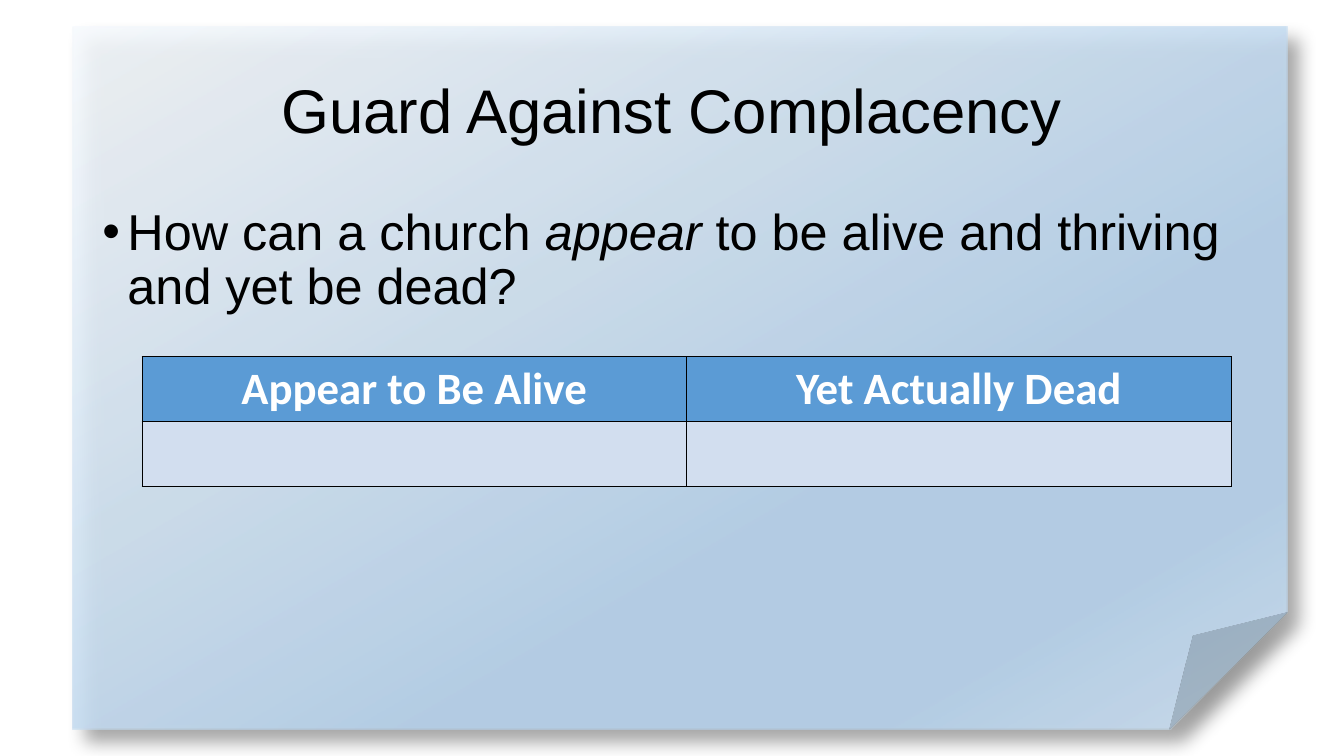
from lxml import etree
from pptx import Presentation
from pptx.dml.color import RGBColor
from pptx.enum.shapes import MSO_SHAPE
from pptx.enum.text import MSO_ANCHOR, PP_ALIGN
from pptx.oxml import parse_xml
from pptx.oxml.ns import qn
from pptx.util import Pt

FOLDED = MSO_SHAPE.FOLDED_CORNER
TOP, MIDDLE = MSO_ANCHOR.TOP, MSO_ANCHOR.MIDDLE
LEFT, CENTER = PP_ALIGN.LEFT, PP_ALIGN.CENTER
BLACK = RGBColor(0x00, 0x00, 0x00)
WHITE = RGBColor(0xFF, 0xFF, 0xFF)
PALE = RGBColor(0xF7, 0xFA, 0xFD)
SKY = RGBColor(0xB5, 0xD2, 0xEC)
MIST = RGBColor(0xCE, 0xE1, 0xF2)
BLUE = RGBColor(0x5B, 0x9B, 0xD5)
ICE = RGBColor(0xD2, 0xDE, 0xEF)
STOPS = [(0, PALE), (64, SKY), (83, SKY), (100, MIST)]
HEADS = ["Appear to Be Alive", "Yet Actually Dead"]
SPACE = 'xmlns:a="http://schemas.openxmlformats.org/drawingml/2006/main"'


def style(para, face, size, color, bold=None):
    """Set the font of a whole paragraph."""
    font = para.font
    font.name, font.size, font.bold = face, Pt(size), bold
    font.color.rgb = color


def add_page(slide):
    """Draw the sheet with its folded corner, gradient and shadow."""
    page = slide.shapes.add_shape(FOLDED, Pt(51.8), Pt(19.4), Pt(867.6), Pt(501.8))
    page.line.fill.background()
    page.shadow.inherit = False
    stops = "".join(
        f'<a:gs pos="{spot * 1000}"><a:srgbClr val="{color}">'
        f'<a:alpha val="87000"/></a:srgbClr></a:gs>'
        for spot, color in STOPS)
    props = page.element.spPr
    props.find(qn("a:ln")).addprevious(parse_xml(
        f'<a:gradFill {SPACE} rotWithShape="1"><a:gsLst>{stops}</a:gsLst>'
        f'<a:lin ang="3600000" scaled="0"/></a:gradFill>'))
    props.find(qn("a:effectLst")).append(parse_xml(
        f'<a:outerShdw {SPACE} blurRad="{Pt(13)}" dist="{Pt(13)}" dir="2700000" '
        f'algn="tl" rotWithShape="0"><a:srgbClr val="{BLACK}">'
        f'<a:alpha val="40000"/></a:srgbClr></a:outerShdw>'))


def add_text(slide, top, height, runs, size, align, anchor, bullet=False):
    """Add one paragraph of (text, italic) runs."""
    box = slide.shapes.add_textbox(Pt(66), Pt(top), Pt(828), Pt(height))
    frame = box.text_frame
    frame.word_wrap = True
    frame.vertical_anchor = anchor
    para = frame.paragraphs[0]
    para.alignment, para.line_spacing = align, 0.9
    if bullet:
        props = para._p.get_or_add_pPr()
        props.set("marL", str(Pt(18)))
        props.set("indent", str(-Pt(18)))
        etree.SubElement(props, qn("a:buFont")).set("typeface", "Arial")
        etree.SubElement(props, qn("a:buChar")).set("char", "•")
    style(para, "Arial", size, BLACK)
    for text, slant in runs:
        run = para.add_run()
        run.text = text
        if slant:
            run.font.italic = True


def add_edges(cell):
    """Give a cell thin black borders."""
    props = cell._tc.get_or_add_tcPr()
    for side in "LRTB":
        props.append(parse_xml(
            f'<a:ln{side} {SPACE} w="{Pt(1)}"><a:solidFill>'
            f'<a:srgbClr val="{BLACK}"/></a:solidFill></a:ln{side}>'))


def add_grid(slide):
    """Add the table with a header row and a row to fill in."""
    frame = slide.shapes.add_table(2, 2, Pt(101.5), Pt(254.9), Pt(778), Pt(92.6))
    table = frame.table
    table.horz_banding = False
    for row, (texts, fill) in enumerate([(HEADS, BLUE), (["", ""], ICE)]):
        for col, text in enumerate(texts):
            cell = table.cell(row, col)
            add_edges(cell)
            cell.fill.solid()
            cell.fill.fore_color.rgb = fill
            if text:
                cell.text = text
                para = cell.text_frame.paragraphs[0]
                para.alignment = CENTER
                style(para, "Calibri", 32, WHITE, True)


def main():
    """Build the slide and save it."""
    deck = Presentation()
    deck.slide_width, deck.slide_height = Pt(960), Pt(540)
    slide = deck.slides.add_slide(deck.slide_layouts[6])
    add_page(slide)
    add_text(slide, 28.8, 104.4, [("Guard Against Complacency", False)],
             44, CENTER, MIDDLE)
    add_text(slide, 144, 342.7,
             [("How can a church ", False), ("appear", True),
              (" to be alive and thriving and yet be dead?", False)],
             36, LEFT, TOP, bullet=True)
    add_grid(slide)
    deck.save("out.pptx")


if __name__ == "__main__":
    main()
